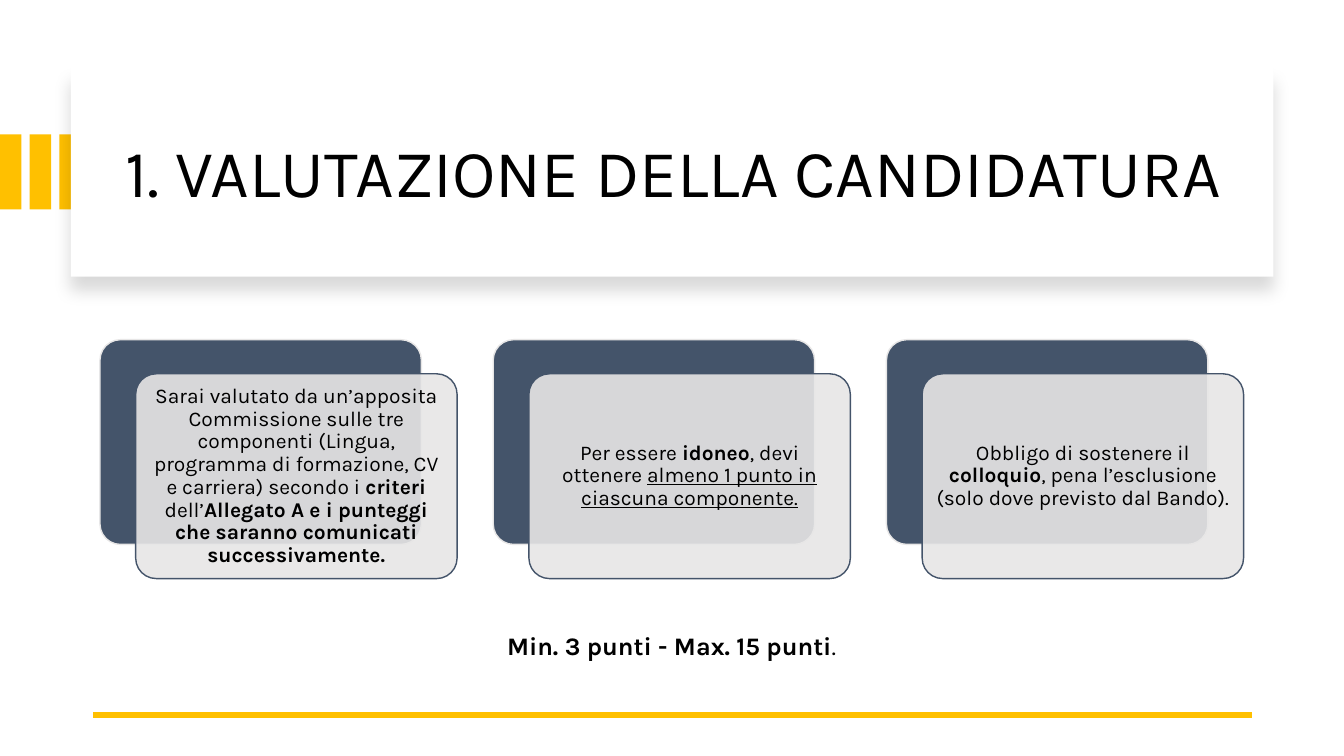
from lxml import etree
from pptx import Presentation
from pptx import util as u
from pptx.dml import color
from pptx.enum import shapes, text
from pptx.oxml import ns

YELLOW, NAVY, GREY, WHITE, BLACK = "FFC000", "44546A", "E7E6E6", "FFFFFF", "000000"


def rgb(value):
    return color.RGBColor.from_string(value)


def write_runs(paragraph, runs, size):
    """Each run is (text, style); the style may hold b (bold) or u (underline)."""
    for words, style in runs:
        run = paragraph.add_run()
        run.text = words
        run.font.name = "Karla"
        run.font.size = u.Pt(size)
        run.font.bold = "b" in style
        run.font.underline = "u" in style
        run.font.color.rgb = rgb(BLACK)


presentation = Presentation()
presentation.slide_width, presentation.slide_height = u.Cm(33.87), u.Cm(19.05)
slide = presentation.slides.add_slide(presentation.slide_layouts[5])

# Yellow bars at the left edge
for index in range(3):
    bar = slide.shapes.add_shape(shapes.MSO_SHAPE.RECTANGLE, u.Cm(0.75 * index),
                                 u.Cm(3.39), u.Cm(0.54), u.Cm(1.89))
    bar.shadow.inherit = False
    bar.fill.solid()
    bar.fill.fore_color.rgb = rgb(YELLOW)
    bar.line.fill.background()

# White title panel with a soft shadow below
panel = slide.shapes.add_shape(shapes.MSO_SHAPE.RECTANGLE, u.Cm(1.79), u.Cm(1.7),
                               u.Cm(30.3), u.Cm(5.27))
panel.shadow.inherit = False
panel.fill.solid()
panel.fill.fore_color.rgb = rgb(WHITE)
panel.line.fill.background()
effects = panel._element.spPr.find(ns.qn("a:effectLst"))
shadow = etree.SubElement(effects, ns.qn("a:outerShdw"), blurRad=str(u.Pt(11)),
                          dist=str(u.Pt(10)), dir="5400000", algn="t", rotWithShape="0")
shadow_color = etree.SubElement(shadow, ns.qn("a:srgbClr"), val=BLACK)
etree.SubElement(shadow_color, ns.qn("a:alpha"), val="15000")

# Title, brought in front of its panel
title = slide.shapes.title
title.left, title.top, title.width, title.height = u.Cm(2.9), u.Cm(2.26), u.Cm(28.27), u.Cm(4.32)
panel._element.addnext(title._element)
title.text_frame.vertical_anchor = text.MSO_ANCHOR.MIDDLE
title.text_frame.auto_size = text.MSO_AUTO_SIZE.NONE
paragraph = title.text_frame.paragraphs[0]
paragraph.alignment = text.PP_ALIGN.LEFT
paragraph.line_spacing = 0.9
write_runs(paragraph, [("1. VALUTAZIONE DELLA CANDIDATURA", "")], 48)

# Yellow rule at the bottom
rule = slide.shapes.add_connector(shapes.MSO_CONNECTOR.STRAIGHT, u.Cm(31.55), u.Cm(18.02),
                                  u.Cm(2.34), u.Cm(18.02))
rule.line.color.rgb = rgb(YELLOW)
rule.line.width = u.Pt(4.5)
etree.SubElement(rule._element.spPr, ns.qn("a:effectLst"))

# Three cards: a navy plate behind a translucent one that carries the text
card_texts = [
    [("Sarai valutato da un’apposita Commissione sulle tre componenti (Lingua, "
      "programma di formazione, CV e carriera) secondo i ", ""),
     ("criteri", "b"), (" dell’", ""),
     ("Allegato A e i punteggi che saranno comunicati successivamente.", "b")],
    [("Per essere ", ""), ("idoneo", "b"), (", devi ottenere ", ""),
     ("almeno 1 punto in ciascuna componente.", "u")],
    [("Obbligo di sostenere il ", ""), ("colloquio", "b"),
     (", pena l’esclusione (solo dove previsto dal Bando).", "")],
]
for index, runs in enumerate(card_texts):
    left = 2.52 + 9.91 * index
    for x, y, fill, line in [(left, 8.56, NAVY, GREY), (left + 0.9, 9.42, GREY, NAVY)]:
        card = slide.shapes.add_shape(shapes.MSO_SHAPE.ROUNDED_RECTANGLE, u.Cm(x), u.Cm(y),
                                      u.Cm(8.1), u.Cm(5.16))
        card.adjustments[0] = 0.1
        card.shadow.inherit = False
        card.fill.solid()
        card.fill.fore_color.rgb = rgb(fill)
        card.line.color.rgb = rgb(line)
        card.line.width = u.Pt(1)
    fill_color = card._element.spPr.find(ns.qn("a:solidFill"))[0]
    etree.SubElement(fill_color, ns.qn("a:alpha"), val="90000")
    frame = card.text_frame
    frame.word_wrap = True
    frame.vertical_anchor = text.MSO_ANCHOR.MIDDLE
    frame.margin_left = frame.margin_right = frame.margin_top = frame.margin_bottom = u.Cm(0.15)
    paragraph = frame.paragraphs[0]
    paragraph.alignment = text.PP_ALIGN.CENTER
    paragraph.line_spacing = 0.9
    write_runs(paragraph, runs, 15)

# Score range
score = slide.shapes.add_textbox(u.Cm(1.9), u.Cm(15.77), u.Cm(30.05), u.Cm(1.03))
score.text_frame.word_wrap = True
score.text_frame.auto_size = text.MSO_AUTO_SIZE.SHAPE_TO_FIT_TEXT
paragraph = score.text_frame.paragraphs[0]
paragraph.alignment = text.PP_ALIGN.CENTER
write_runs(paragraph, [("Min. 3 punti - Max. 15 punti", "b"), (".", "")], 18)

presentation.save("out.pptx")
